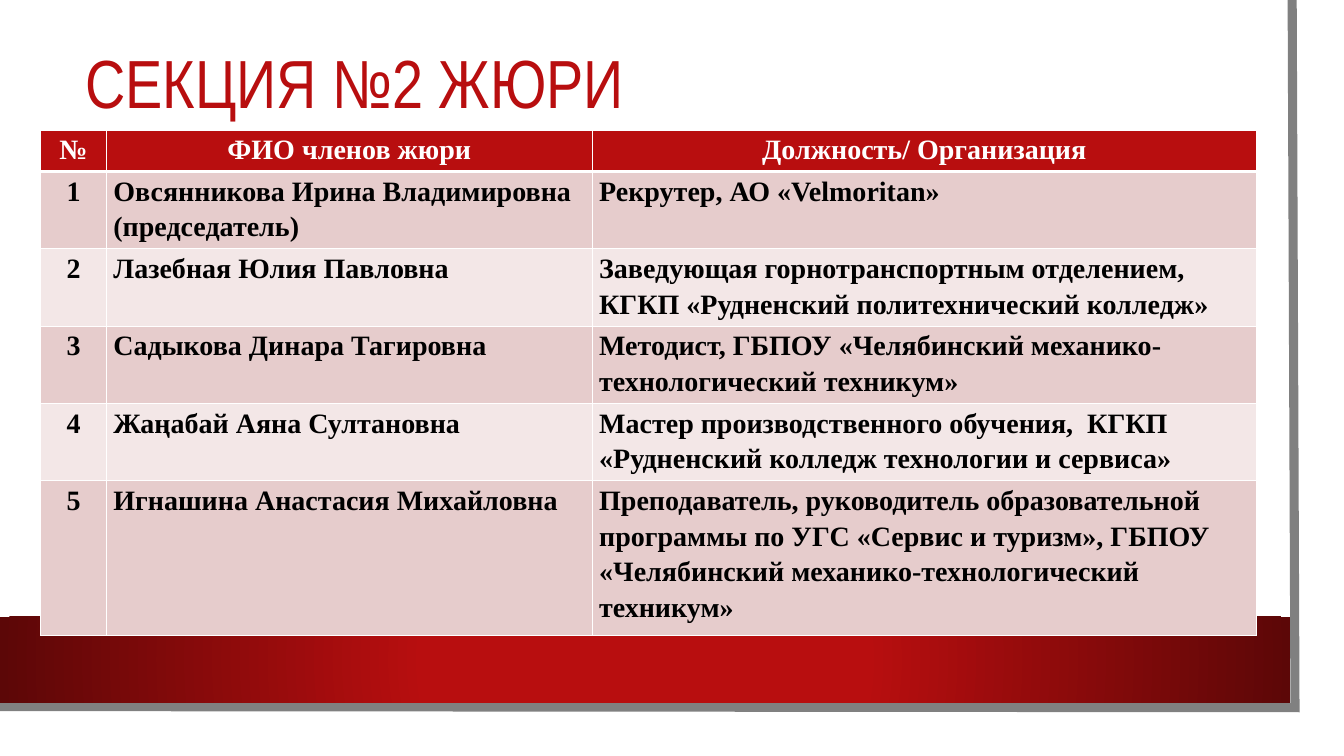
"""Build the jury list slide for section 2."""
from dataclasses import dataclass

from lxml import etree
from pptx import Presentation
from pptx.dml.color import RGBColor
from pptx.enum.shapes import MSO_SHAPE
from pptx.enum.text import MSO_ANCHOR, PP_ALIGN
from pptx.oxml.ns import qn
from pptx.util import Pt

RECTANGLE = MSO_SHAPE.RECTANGLE
MIDDLE = MSO_ANCHOR.MIDDLE
LEFT, CENTER = PP_ALIGN.LEFT, PP_ALIGN.CENTER


@dataclass(frozen=True)
class Theme:
    white: str = "FFFFFF"
    black: str = "000000"
    red: str = "B80E0F"
    dark_red: str = "5C0707"
    gray: str = "808080"
    odd_row: str = "E6CCCC"
    even_row: str = "F3E7E7"
    title_font: str = "Arial Narrow"
    table_font: str = "Times New Roman"
    title_size: float = 48.6
    table_size: float = 20


def style_text(paragraph, font, size, color, spacing):
    paragraph.line_spacing = spacing
    for span in paragraph.runs:
        span.font.name = font
        span.font.size = Pt(size)
        span.font.color.rgb = RGBColor.from_string(color)


def add_border(cell, side, width, color):
    properties = cell._tc.get_or_add_tcPr()
    line = etree.SubElement(properties, qn(f"a:ln{side}"), w=str(Pt(width)))
    solid = etree.SubElement(line, qn("a:solidFill"))
    etree.SubElement(solid, qn("a:srgbClr"), val=color)


theme = Theme()
deck = Presentation()
deck.slide_width, deck.slide_height = Pt(960), Pt(540)
page = deck.slides.add_slide(deck.slide_layouts[6])

card = page.shapes.add_shape(RECTANGLE, Pt(0), Pt(0), Pt(943), Pt(523.5))
card.shadow.inherit = False
card.fill.solid()
card.fill.fore_color.rgb = RGBColor.from_string(theme.white)
card.line.fill.background()

outline = page.shapes.build_freeform(Pt(923), Pt(0))
outline.add_line_segments([(Pt(925), Pt(505.5)), (Pt(-2), Pt(504.7))], close=False)
edge = outline.convert_to_shape()
edge.shadow.inherit = False
edge.fill.background()
edge.line.color.rgb = RGBColor.from_string(theme.gray)
edge.line.width = Pt(6.5)
etree.SubElement(edge.line._ln, qn("a:miter"), lim="800000")

band = page.shapes.add_shape(RECTANGLE, Pt(0), Pt(440.6), Pt(921.6), Pt(61.4))
band.shadow.inherit = False
band.line.fill.background()
band.fill.gradient()
stops = [(0.34, theme.red), (1, theme.dark_red)]
for stop, (position, color) in zip(band.fill.gradient_stops, stops):
    stop.position = position
    stop.color.rgb = RGBColor.from_string(color)
gradient = band._element.spPr.find(qn("a:gradFill"))
gradient.remove(gradient.find(qn("a:lin")))
radial = etree.SubElement(gradient, qn("a:path"), path="circle")
etree.SubElement(radial, qn("a:fillToRect"), l="50000", t="50000", r="50000", b="50000")

title = page.shapes.add_textbox(Pt(54), Pt(31), Pt(818.6), Pt(62))
title.text_frame.word_wrap = True
title.text_frame.vertical_anchor = MIDDLE
title.text_frame.text = "СЕКЦИЯ №2 ЖЮРИ"
style_text(title.text_frame.paragraphs[0], theme.title_font, theme.title_size, theme.red, 0.9)

jury = [
    ("№", "ФИО членов жюри", "Должность/ Организация"),
    ("1", "Овсянникова Ирина Владимировна (председатель)", "Рекрутер, АО «Velmoritan»"),
    ("2", "Лазебная Юлия Павловна",
     "Заведующая горнотранспортным отделением, КГКП «Рудненский политехнический колледж»"),
    ("3", "Садыкова Динара Тагировна",
     "Методист, ГБПОУ «Челябинский механико-технологический техникум»"),
    ("4", "Жаңабай Аяна Султановна",
     "Мастер производственного обучения,  КГКП «Рудненский колледж технологии и сервиса»"),
    ("5", "Игнашина Анастасия Михайловна",
     "Преподаватель, руководитель образовательной программы по УГС «Сервис и туризм», "
     "ГБПОУ «Челябинский механико-технологический техникум»"),
]
column_widths = [47, 347, 474.5]
row_height = 29.5
table = page.shapes.add_table(
    len(jury), len(column_widths), Pt(29), Pt(93),
    Pt(sum(column_widths)), Pt(row_height * len(jury))).table
for column, width in zip(table.columns, column_widths):
    column.width = Pt(width)

for row_index, texts in enumerate(jury):
    table.rows[row_index].height = Pt(row_height)
    header = row_index == 0
    stripe = theme.odd_row if row_index % 2 else theme.even_row
    for column_index, text in enumerate(texts):
        cell = table.cell(row_index, column_index)
        cell.margin_left = cell.margin_right = Pt(5)
        cell.margin_top = cell.margin_bottom = Pt(0)
        for side in "LRTB":
            heavy = (header and side == "B") or (row_index == 1 and side == "T")
            add_border(cell, side, 3 if heavy else 1, theme.white)
        cell.fill.solid()
        cell.fill.fore_color.rgb = RGBColor.from_string(theme.red if header else stripe)
        cell.text_frame.text = text
        paragraph = cell.text_frame.paragraphs[0]
        paragraph.alignment = CENTER if header or column_index == 0 else LEFT
        style_text(paragraph, theme.table_font, theme.table_size,
                   theme.white if header else theme.black, 1.15)
        paragraph.runs[0].font.bold = True

deck.save("out.pptx")
